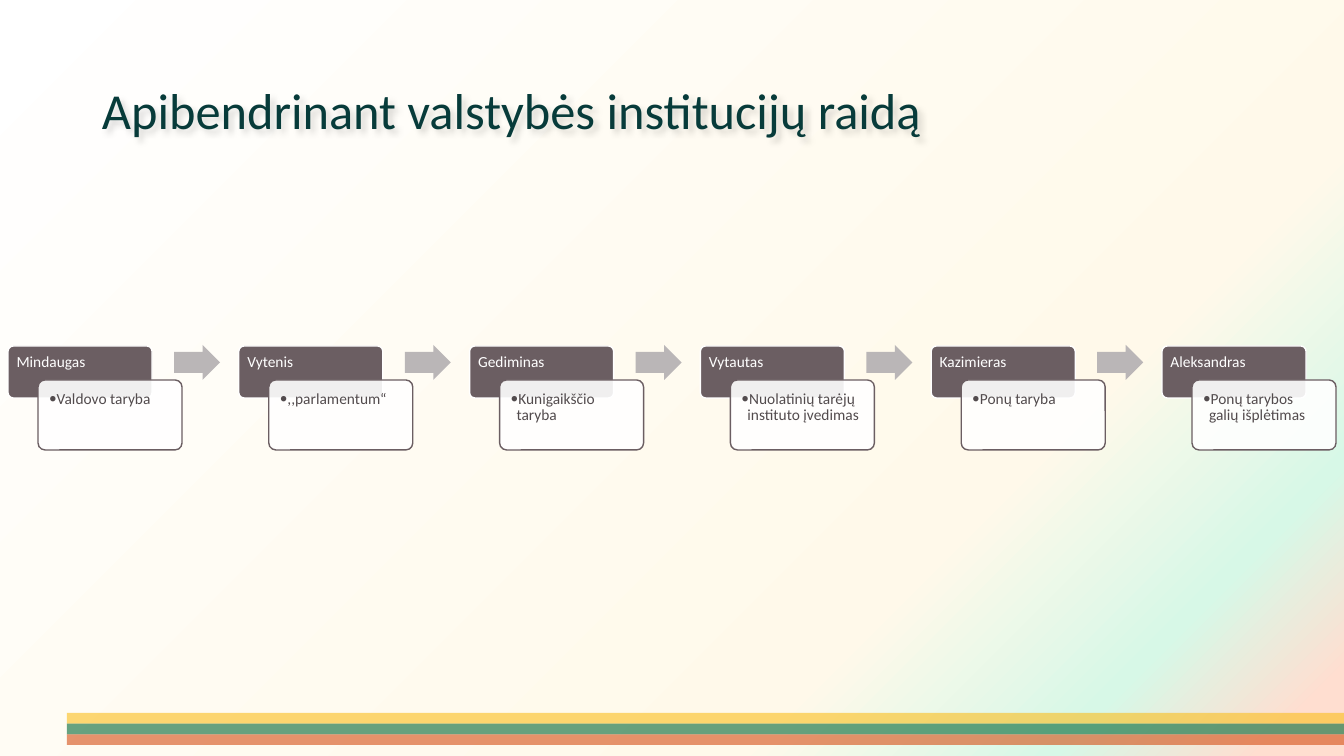
from dataclasses import dataclass
from typing import Any, NamedTuple

from lxml.etree import SubElement
from pptx import Presentation
from pptx.dml.color import RGBColor
from pptx.enum.shapes import MSO_SHAPE as Preset
from pptx.enum.text import MSO_ANCHOR as Anchor, PP_ALIGN as Align
from pptx.oxml import parse_xml
from pptx.oxml.ns import nsdecls, qn
from pptx.util import Pt

EMU_PER_PX = 914400 / 100.8
SLIDE_WIDTH, SLIDE_HEIGHT = 1344, 756


@dataclass(frozen=True)
class Theme:
    font: str = "Calibri"
    title_size: int = 36
    card_size: int = 11
    title: str = "073B3A"
    header: str = "6B5E62"
    body_text: str = "524B4D"
    arrow: str = "BAB6B7"
    white: str = "FFFFFF"
    bands: tuple[str, ...] = ("FBBD1A", "006633", "D54D13")
    backdrop: tuple[tuple[int, str], ...] = (
        (0, "FFFFFF"), (71, "FFF9EA"), (86, "D7F8E7"), (96, "FFDED0"))


class Box(NamedTuple):
    left: float
    top: float
    width: float
    height: float

    def moved(self, distance: float) -> "Box":
        return self._replace(left=self.left + distance)

    def emu(self) -> list[int]:
        return [px(length) for length in self]


class Ruler(NamedTuple):
    name: str
    institution: str


THEME = Theme()
TITLE = "Apibendrinant valstybės institucijų raidą"
RULERS = (
    Ruler("Mindaugas", "Valdovo taryba"),
    Ruler("Vytenis", ",,parlamentum“"),
    Ruler("Gediminas", "Kunigaikščio taryba"),
    Ruler("Vytautas", "Nuolatinių tarėjų instituto įvedimas"),
    Ruler("Kazimieras", "Ponų taryba"),
    Ruler("Aleksandras", "Ponų tarybos galių išplėtimas"),
)
TITLE_BOX = Box(92, 40, 1160, 146)
HEADER_BOX = Box(8, 346, 144, 52)
BODY_BOX = Box(38, 380, 144, 70)
ARROW_BOX = Box(174, 345, 46, 35)
CARD_STEP = 1154 / (len(RULERS) - 1)
BAND_BOX = Box(67, 713, 1277, 32 / len(THEME.bands))


def px(length: float) -> int:
    return round(length * EMU_PER_PX)


def apply(target: Any, values: dict[str, Any]) -> None:
    for name, value in values.items():
        setattr(target, name, value)


def paint_background(slide: Any) -> None:
    """Fill the slide with a radial gradient spreading from the top left."""
    slide.background.fill.solid()
    stops = "".join(
        f'<a:gs pos="{percent * 1000}"><a:srgbClr val="{color}"/></a:gs>'
        for percent, color in THEME.backdrop)
    gradient = parse_xml(
        f'<a:gradFill {nsdecls("a")} rotWithShape="1"><a:gsLst>{stops}</a:gsLst>'
        '<a:path path="circle"><a:fillToRect r="100000" b="100000"/></a:path></a:gradFill>')
    solid = next(slide.element.iter(qn("a:solidFill")))
    solid.getparent().replace(solid, gradient)


def add_block(slide: Any, preset: Preset, box: Box, fill: str, opacity: int = 100,
              line: str | None = None, adjustments: tuple[float, ...] = ()) -> Any:
    shape = slide.shapes.add_shape(preset, *box.emu())
    shape.shadow.inherit = False
    for index, value in enumerate(adjustments):
        shape.adjustments[index] = value
    shape.fill.solid()
    shape.fill.fore_color.rgb = RGBColor.from_string(fill)
    if opacity < 100:
        color = next(shape.element.spPr.iter(qn("a:srgbClr")))
        SubElement(color, qn("a:alpha"), val=str(opacity * 1000))
    if line:
        shape.line.color.rgb = RGBColor.from_string(line)
        shape.line.width = Pt(1)
    else:
        shape.line.fill.background()
    return shape


def write(shape: Any, text: str, size: int, color: str, anchor: Anchor,
          inset: int) -> Any:
    frame = shape.text_frame
    margins = ("margin_left", "margin_top", "margin_right", "margin_bottom")
    apply(frame, {"word_wrap": True, "vertical_anchor": anchor,
                  **dict.fromkeys(margins, px(inset))})
    paragraph = frame.paragraphs[0]
    apply(paragraph, {"alignment": Align.LEFT, "line_spacing": 0.9})
    run = paragraph.add_run()
    run.text = text
    apply(run.font, {"name": THEME.font, "size": Pt(size)})
    run.font.color.rgb = RGBColor.from_string(color)
    return paragraph


def add_bullet(paragraph: Any, indent: int) -> None:
    paragraph.level = 1
    properties = paragraph._p.get_or_add_pPr()
    properties.set("marL", str(px(indent)))
    properties.set("indent", str(-px(indent)))
    SubElement(properties, qn("a:buFont"), typeface=THEME.font)
    SubElement(properties, qn("a:buChar"), char="•")


def add_title(slide: Any) -> None:
    title = slide.shapes.add_textbox(*TITLE_BOX.emu())
    write(title, TITLE, THEME.title_size, THEME.title, Anchor.MIDDLE, 10)
    title.element.spPr.append(parse_xml(
        f'<a:effectLst {nsdecls("a")}><a:outerShdw blurRad="50800" dist="38100" '
        'dir="2700000" algn="tl"><a:srgbClr val="000000"><a:alpha val="15000"/>'
        '</a:srgbClr></a:outerShdw></a:effectLst>'))


def add_card(slide: Any, ruler: Ruler, distance: float) -> None:
    header = add_block(slide, Preset.ROUNDED_RECTANGLE, HEADER_BOX.moved(distance),
                       THEME.header, line=THEME.white, adjustments=(0.1,))
    write(header, ruler.name, THEME.card_size, THEME.white, Anchor.TOP, 7)
    body = add_block(slide, Preset.ROUNDED_RECTANGLE, BODY_BOX.moved(distance),
                     THEME.white, 90, THEME.header, (0.1,))
    paragraph = write(body, ruler.institution, THEME.card_size, THEME.body_text,
                      Anchor.TOP, 9)
    add_bullet(paragraph, 6)


def main() -> None:
    presentation = Presentation()
    apply(presentation, {"slide_width": px(SLIDE_WIDTH), "slide_height": px(SLIDE_HEIGHT)})
    slide = presentation.slides.add_slide(presentation.slide_layouts[6])
    paint_background(slide)
    for index, color in enumerate(THEME.bands):
        band = BAND_BOX._replace(top=BAND_BOX.top + index * BAND_BOX.height)
        add_block(slide, Preset.RECTANGLE, band, color, 60)
    add_title(slide)
    for index, ruler in enumerate(RULERS):
        distance = index * CARD_STEP
        add_card(slide, ruler, distance)
        if ruler is not RULERS[-1]:
            add_block(slide, Preset.RIGHT_ARROW, ARROW_BOX.moved(distance),
                      THEME.arrow, adjustments=(0.6, 0.5))
    presentation.save("out.pptx")


if __name__ == "__main__":
    main()
